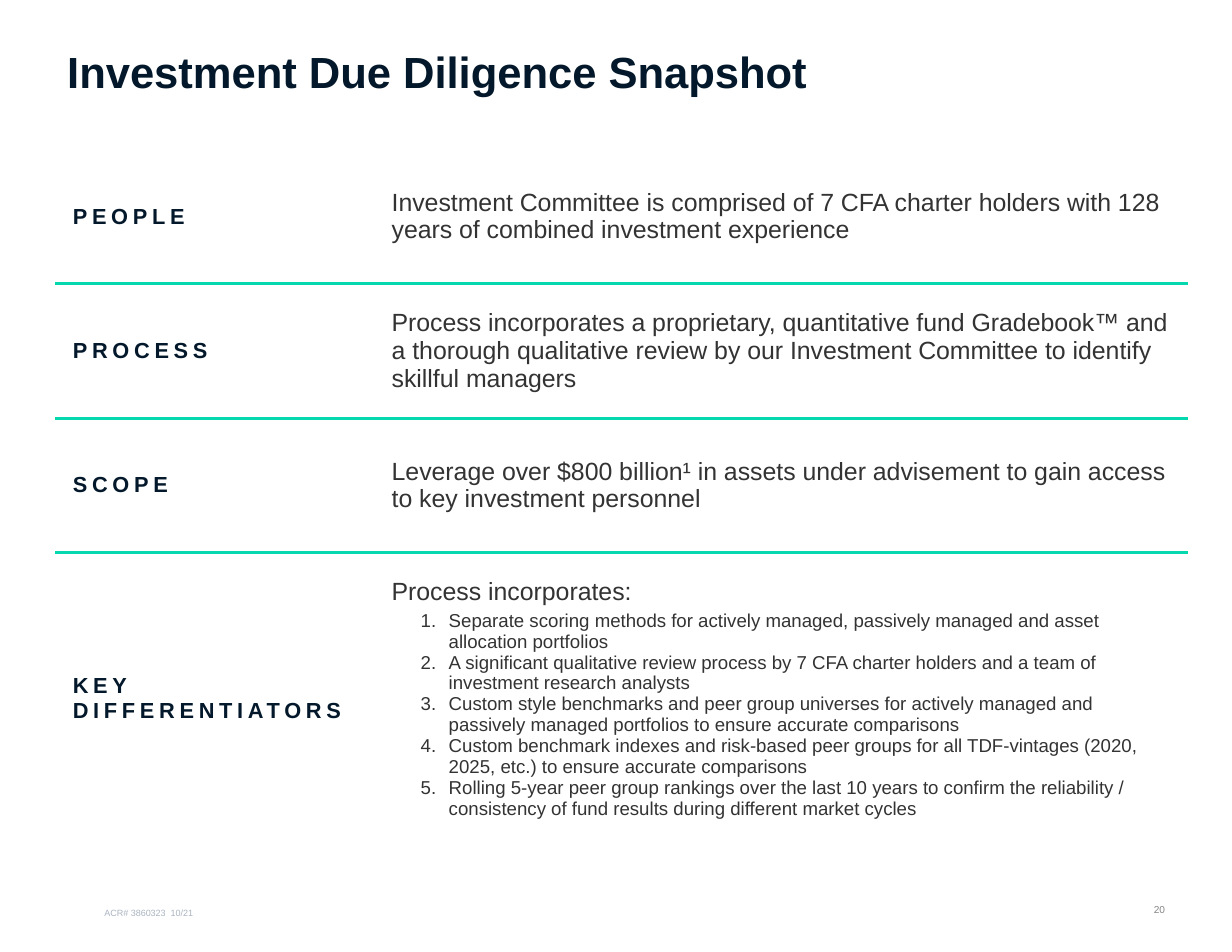
from lxml.etree import SubElement
from pptx import Presentation
from pptx.dml.color import RGBColor
from pptx.enum.text import MSO_ANCHOR as Anchor, MSO_AUTO_SIZE as AutoSize, PP_ALIGN as Align
from pptx.oxml import parse_xml
from pptx.oxml.ns import nsdecls, qn
from pptx.util import Pt

NAVY = RGBColor(0x03, 0x18, 0x2A)
CHARCOAL = RGBColor(0x32, 0x33, 0x32)
TEAL = RGBColor(0x05, 0xD8, 0xAF)
GRAY = RGBColor(0x83, 0x86, 0x83)
BLUE_GRAY = RGBColor(0xAA, 0xB4, 0xC1)

FONT = "Arial"
CELL_MARGIN = 10.8
COLUMN_WIDTHS = (205, 522)
ROW_HEIGHTS = (86.4, 86.4, 86.4, 166)

# Each topic: label lines, statement, numbered points
TOPICS = [
    (["PEOPLE"],
     "Investment Committee is comprised of 7 CFA charter holders with 128 years of "
     "combined investment experience", []),
    (["PROCESS"],
     "Process incorporates a proprietary, quantitative fund Gradebook™ and a thorough "
     "qualitative review by our Investment Committee to identify skillful managers", []),
    (["SCOPE"],
     "Leverage over $800 billion¹ in assets under advisement to gain access to key "
     "investment personnel", []),
    (["KEY", "DIFFERENTIATORS"],
     "Process incorporates:",
     ["Separate scoring methods for actively managed, passively managed and asset "
      "allocation portfolios",
      "A significant qualitative review process by 7 CFA charter holders and a team of "
      "investment research analysts",
      "Custom style benchmarks and peer group universes for actively managed and "
      "passively managed portfolios to ensure accurate comparisons",
      "Custom benchmark indexes and risk-based peer groups for all TDF-vintages (2020, "
      "2025, etc.) to ensure accurate comparisons",
      "Rolling 5-year peer group rankings over the last 10 years to confirm the "
      "reliability / consistency of fund results during different market cycles"]),
]


def style(paragraph, size, color, bold=False):
    font = paragraph.font
    font.name, font.size, font.bold = FONT, Pt(size), bold
    font.color.rgb = color


def add_paragraphs(frame, lines):
    """Fill an empty text frame, one paragraph per line, and return the paragraphs."""
    for index, line in enumerate(lines):
        paragraph = frame.add_paragraph() if index else frame.paragraphs[0]
        paragraph.text = line
    return frame.paragraphs


def number(paragraph):
    """Turn a paragraph into an indented, automatically numbered point."""
    paragraph.level = 1
    properties = paragraph._p.get_or_add_pPr()
    properties.set("marL", str(Pt(36.72)))
    properties.set("indent", str(Pt(-18)))
    bullet_color = SubElement(properties, qn("a:buClr"))
    SubElement(bullet_color, qn("a:srgbClr"), val=str(CHARCOAL))
    SubElement(properties, qn("a:buFont"), typeface="+mj-lt")
    SubElement(properties, qn("a:buAutoNum"), type="arabicPeriod")


def rule(cell, side):
    """Draw a teal border on one side of a cell: T or B."""
    cell._tc.get_or_add_tcPr().insert(0, parse_xml(
        f'<a:ln{side} {nsdecls("a")} w="{Pt(2.25)}"><a:solidFill>'
        f'<a:srgbClr val="{TEAL}"/></a:solidFill></a:ln{side}>'))


def fill_label(cell, lines):
    for paragraph in add_paragraphs(cell.text_frame, lines):
        style(paragraph, 14, NAVY, bold=True)
        paragraph._p.pPr.get_or_add_defRPr().set("spc", "300")


def fill_detail(cell, statement, points):
    lead, *numbered = add_paragraphs(cell.text_frame, [statement, *points])
    if points:
        lead.space_after = Pt(3)
    style(lead, 16, CHARCOAL)
    for paragraph in numbered:
        number(paragraph)
        style(paragraph, 12, CHARCOAL)


def add_topic_table(slide, left, top):
    frame = slide.shapes.add_table(len(TOPICS), 2, Pt(left), Pt(top),
                                   Pt(sum(COLUMN_WIDTHS)), Pt(sum(ROW_HEIGHTS)))
    table = frame.table
    table.first_row = table.horz_banding = False
    for column, width in zip(table.columns, COLUMN_WIDTHS):
        column.width = Pt(width)
    for index, (label, statement, points) in enumerate(TOPICS):
        row = table.rows[index]
        row.height = Pt(ROW_HEIGHTS[index])
        fill_label(row.cells[0], label)
        fill_detail(row.cells[1], statement, points)
        for cell in row.cells:
            cell.fill.background()
            cell.vertical_anchor = Anchor.MIDDLE
            cell.margin_left = cell.margin_right = Pt(CELL_MARGIN)
            cell.margin_top = cell.margin_bottom = Pt(CELL_MARGIN)
            if index < len(TOPICS) - 1:
                rule(cell, "B")
            if index:
                rule(cell, "T")


def set_title(slide, left, top, width, height):
    title = slide.shapes.title
    title.left, title.top, title.width, title.height = map(Pt, (left, top, width, height))
    frame = title.text_frame
    frame.text = "Investment Due Diligence Snapshot"
    frame.auto_size = AutoSize.NONE
    frame.vertical_anchor = Anchor.MIDDLE
    heading = frame.paragraphs[0]
    heading.alignment = Align.LEFT
    heading.line_spacing = 0.9
    style(heading, 28, NAVY, bold=True)


def add_note(slide, box, text, size, color, anchor, align):
    frame = slide.shapes.add_textbox(*map(Pt, box)).text_frame
    frame.word_wrap = True
    frame.vertical_anchor = anchor
    note = add_paragraphs(frame, [text])[0]
    note.alignment = align
    style(note, size, color)


def main():
    deck = Presentation()
    deck.slide_width, deck.slide_height = Pt(792), Pt(612)
    slide = deck.slides.add_slide(deck.slide_layouts[5])
    set_title(slide, 36, 33, 720, 30)
    add_note(slide, (720, 571, 36, 27.4), "20", 6.5, GRAY, Anchor.MIDDLE, Align.RIGHT)
    add_note(slide, (60, 576, 342, 18), "ACR# 3860323  10/21", 5.8, BLUE_GRAY,
             Anchor.BOTTOM, Align.LEFT)
    add_topic_table(slide, 36, 96)
    deck.save("out.pptx")


if __name__ == "__main__":
    main()
